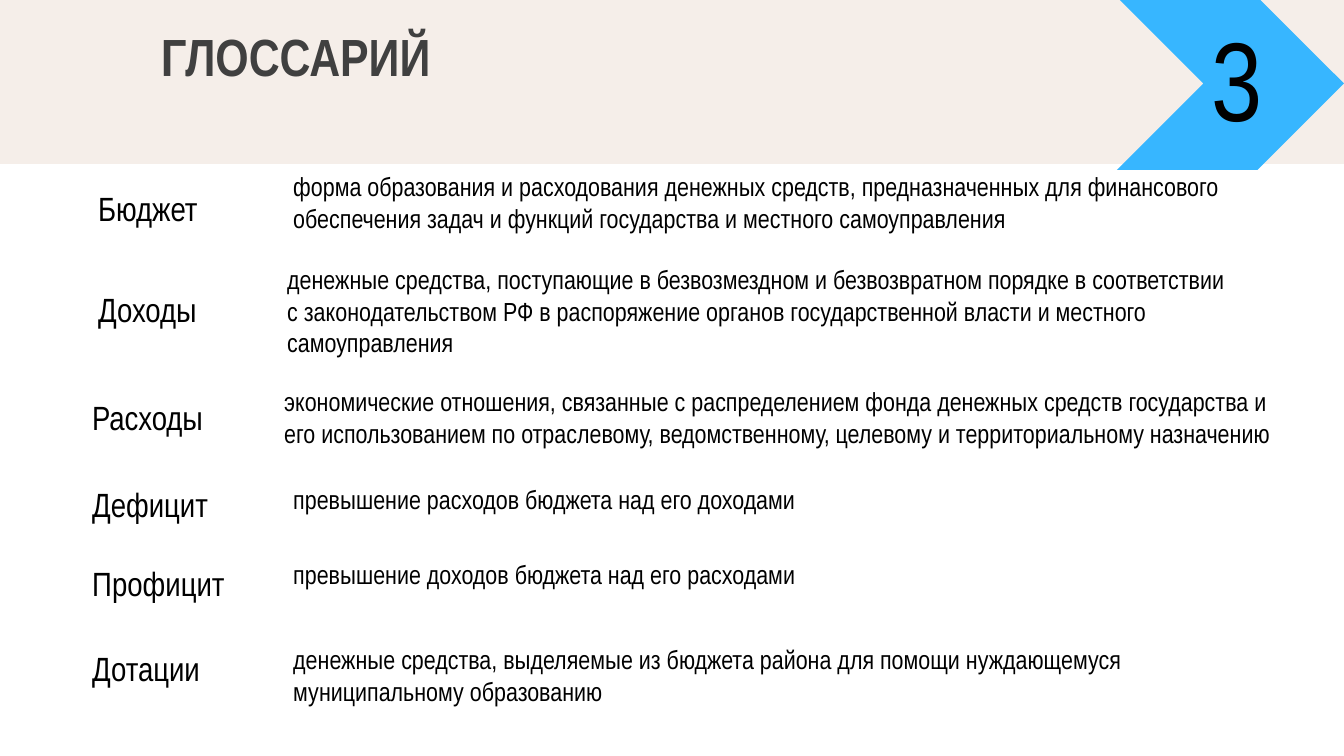
from pptx import Presentation
from pptx import util as u
from pptx.dml.color import RGBColor
from pptx.enum import shapes, text

EMU_PER_PX = 9144000 / 1344
WIDTH, HEIGHT = 1344, 756

BLACK = RGBColor(0x00, 0x00, 0x00)
GRAY = RGBColor(0x40, 0x40, 0x40)
BEIGE = RGBColor(0xF5, 0xEE, 0xE9)
BLUE = RGBColor(0x37, 0xB6, 0xFF)

# Term, its box, definition, its box; boxes are left, top, width, height.
GLOSSARY = [
    ("Бюджет", (85, 155, 211, 82),
     "форма образования и расходования денежных средств, предназначенных для "
     "финансового обеспечения задач и функций государства и местного самоуправления",
     (280, 164, 976, 77)),
    ("Доходы", (85, 262, 211, 75),
     "денежные средства, поступающие в безвозмездном и безвозвратном порядке в "
     "соответствии с законодательством РФ в распоряжение органов государственной "
     "власти и местного самоуправления",
     (274, 257, 976, 109)),
    ("Расходы", (79, 370, 211, 75),
     "экономические отношения, связанные с распределением фонда денежных средств "
     "государства и его использованием по отраслевому, ведомственному, целевому и "
     "территориальному назначению",
     (271, 379, 1030, 77)),
    ("Дефицит", (79, 457, 208, 67),
     "превышение расходов бюджета над его доходами", (280, 477, 996, 46)),
    ("Профицит", (79, 536, 215, 75),
     "превышение доходов бюджета над его расходами", (280, 552, 976, 46)),
    ("Дотации", (79, 621, 137, 75),
     "денежные средства, выделяемые из бюджета района для помощи нуждающемуся "
     "муниципальному образованию",
     (280, 637, 976, 77)),
]


def px(value):
    return u.Emu(round(value * EMU_PER_PX))


def add_run(paragraph, content, size, font="Arial Narrow", color=BLACK, bold=False):
    run = paragraph.add_run()
    run.text = content
    run.font.name = font
    run.font.size = u.Pt(size)
    run.font.bold = bold
    run.font.color.rgb = color


class SlideBuilder:
    def __init__(self, slide):
        self.slide = slide

    def shape(self, kind, box, color):
        shape = self.slide.shapes.add_shape(kind, *map(px, box))
        shape.shadow.inherit = False
        shape.fill.solid()
        shape.fill.fore_color.rgb = color
        shape.line.fill.background()

    def text(self, content, box, spacing=None, inset=True, tail_size=None, **style):
        """Add a text box; tail_size sets a closing space that shapes the line height."""
        frame = self.slide.shapes.add_textbox(*map(px, box)).text_frame
        frame.word_wrap = True
        frame.auto_size = text.MSO_AUTO_SIZE.SHAPE_TO_FIT_TEXT
        if not inset:
            frame.margin_left = frame.margin_right = 0
            frame.margin_top = frame.margin_bottom = 0
        paragraph = frame.paragraphs[0]
        paragraph.line_spacing = spacing
        add_run(paragraph, content, **style)
        if tail_size:
            add_run(paragraph, " ", tail_size, font="Calibri")


def main():
    presentation = Presentation()
    presentation.slide_width, presentation.slide_height = px(WIDTH), px(HEIGHT)
    builder = SlideBuilder(presentation.slides.add_slide(presentation.slide_layouts[6]))

    builder.shape(shapes.MSO_SHAPE.RECTANGLE, (0, -7, WIDTH, 171), BEIGE)
    builder.shape(shapes.MSO_SHAPE.CHEVRON, (1117, -3, 227, 173), BLUE)
    builder.text("3", (1212, -16, 89, 169), spacing=u.Pt(89.6), inset=False,
                 tail_size=80, size=60)
    builder.text("ГЛОССАРИЙ", (161, 24, 817, 63), inset=False,
                 size=28, color=GRAY, bold=True)

    for index, (term, term_box, definition, definition_box) in enumerate(GLOSSARY):
        builder.text(term, term_box, spacing=1.5, size=18,
                     tail_size=20 if index == 0 else None)
        builder.text(definition, definition_box, size=14)

    presentation.save("out.pptx")


if __name__ == "__main__":
    main()
